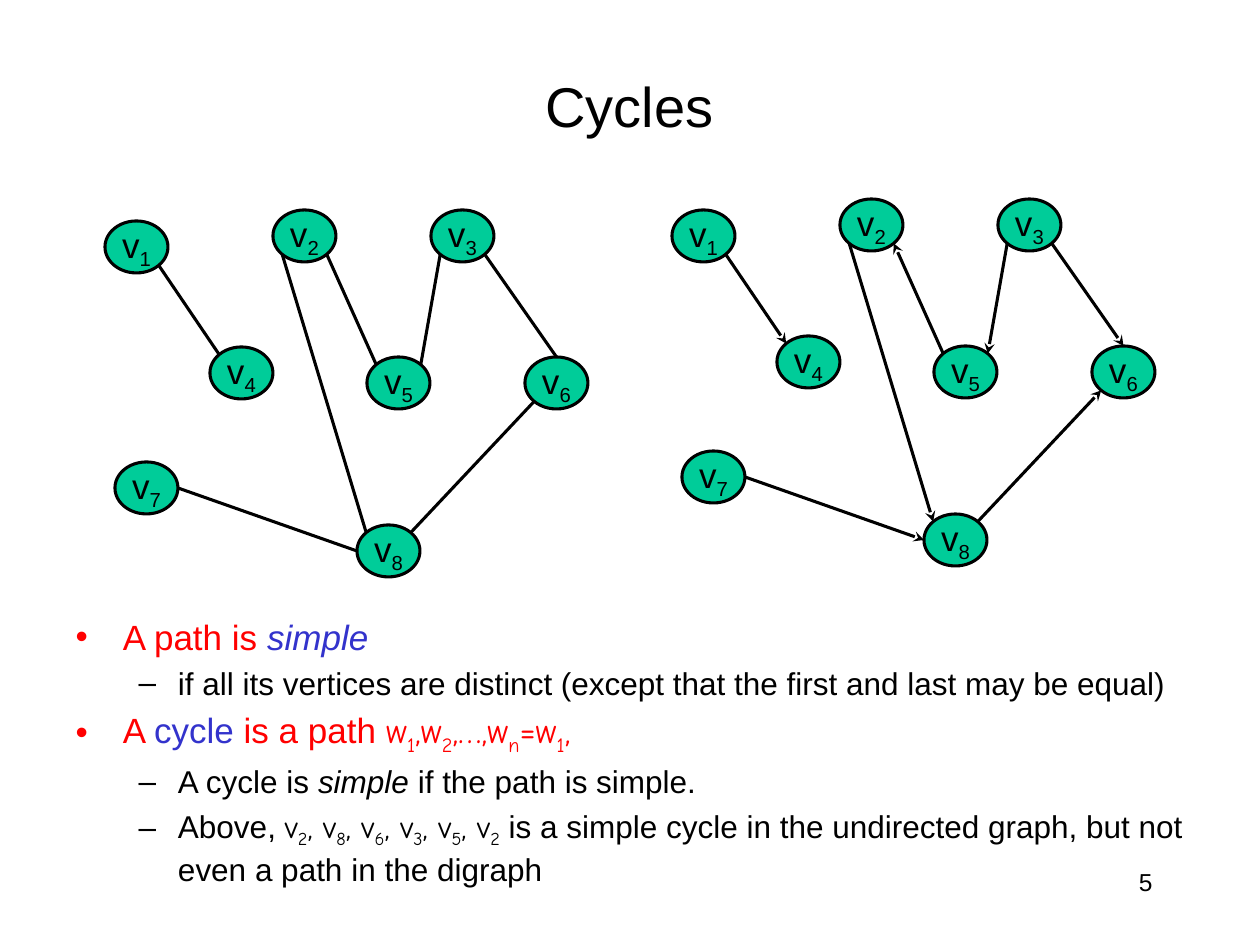
import math
import pptx
import pptx.dml.color
import pptx.enum.shapes
import pptx.enum.text
import pptx.oxml.ns
import pptx.util
from lxml import etree
from dataclasses import dataclass


@dataclass(frozen=True)
class Theme:
    font: str = "Arial"
    math_font: str = "Comic Neue"
    black: str = "000000"
    red: str = "FF0000"
    blue: str = "3333CC"
    green: str = "00CC99"
    title_size: int = 32
    large: int = 20
    medium: int = 18
    small: int = 14
    line: float = 1.75


THEME = Theme()
SCALE = 914400 / 126
TITLE = "Cycles"
PAGE_NUMBER = "5"
TITLE_BOX = (94, 53, 1071, 105)
BODY_BOX = (63, 609, 1134, 301)
NUMBER_BOX = (903, 861, 262, 63)

RED = {"color": THEME.red}
BLUE = {"color": THEME.blue}
ITALIC = {"italic": True}
MATH = {"font": THEME.math_font}
BULLETS = [
    (0, [("A path is ", RED), ("simple", BLUE | ITALIC)]),
    (1, [("if all its vertices are distinct (except that the first and last may be equal)", {})]),
    (0, [("A ", RED), ("cycle", BLUE), (" is a path ", RED),
         ("w_1,w_2,…,w_n=w_1,", RED | MATH)]),
    (1, [("A cycle is ", {}), ("simple", ITALIC), (" if the path is simple.", {})]),
    (1, [("Above, ", {}), ("v_2, v_8, v_6, v_3, v_5, v_2", MATH),
         (" is a simple cycle in the undirected graph, but not even a path in the digraph", {})]),
]

NODE_SIZE = (63, 52)
NODES = {
    1: (105, 221), 2: (273, 210), 3: (431, 210), 4: (210, 347),
    5: (367, 357), 6: (525, 357), 7: (115, 462), 8: (357, 525),
}
EDGES = [
    (1, "SE", 4, "NW"), (5, "NW", 2, "SE"), (3, "SW", 5, "NE"), (8, "NE", 6, "SW"),
    (2, "SW", 8, "NW"), (3, "SE", 6, "N"), (7, "E", 8, "W"),
]
GRAPHS = [((0, 0), False), ((567, -11), True)]
ANGLES = {"E": 0, "SE": 45, "SW": 135, "W": 180, "NW": 225, "N": 270, "NE": 315}


def emu(*lengths):
    return [round(length * SCALE) for length in lengths]


def rgb(color):
    return pptx.dml.color.RGBColor.from_string(color)


def add_text(para, text, size, color=THEME.black, font=THEME.font, italic=False):
    first, *rest = text.split("_")
    pieces = [(first, False)]
    for part in rest:
        pieces += [(part[0], True), (part[1:], False)]
    for piece, subscript in pieces:
        if not piece:
            continue
        span = para.add_run()
        span.text = piece
        span.font.name = font
        span.font.size = pptx.util.Pt(size)
        span.font.italic = italic
        span.font.color.rgb = rgb(color)
        if subscript:
            span.font._element.set("baseline", "-25000")


def place(shape, box):
    shape.left, shape.top, shape.width, shape.height = emu(*box)
    shape.text_frame.auto_size = pptx.enum.text.MSO_AUTO_SIZE.NONE


def add_node(shapes, number, corner):
    node = shapes.add_shape(pptx.enum.shapes.MSO_SHAPE.OVAL, *emu(*corner, *NODE_SIZE))
    node.shadow.inherit = False
    node.fill.solid()
    node.fill.fore_color.rgb = rgb(THEME.green)
    node.line.color.rgb = rgb(THEME.black)
    node.line.width = pptx.util.Pt(THEME.line)
    frame = node.text_frame
    frame.word_wrap = False
    frame.vertical_anchor = pptx.enum.text.MSO_ANCHOR.MIDDLE
    para = frame.paragraphs[0]
    para.alignment = pptx.enum.text.PP_ALIGN.CENTER
    add_text(para, f"v_{number}", THEME.large)


def rim_point(corner, side):
    angle = math.radians(ANGLES[side])
    width, height = NODE_SIZE
    return (corner[0] + width / 2 * (1 + math.cos(angle)),
            corner[1] + height / 2 * (1 + math.sin(angle)))


def add_edge(shapes, start, end, directed):
    edge = shapes.add_connector(pptx.enum.shapes.MSO_CONNECTOR.STRAIGHT, *emu(*start, *end))
    edge.line.color.rgb = rgb(THEME.black)
    edge.line.width = pptx.util.Pt(THEME.line)
    if directed:
        line = edge.line._get_or_add_ln()
        etree.SubElement(line, pptx.oxml.ns.qn("a:tailEnd"), type="stealth")
    etree.SubElement(edge._element.spPr, pptx.oxml.ns.qn("a:effectLst"))


def add_graph(page, shift, directed):
    group = page.shapes.add_group_shape()
    corners = {number: (x + shift[0], y + shift[1]) for number, (x, y) in NODES.items()}
    for number, corner in corners.items():
        add_node(group.shapes, number, corner)
    for source, source_side, target, target_side in EDGES:
        add_edge(group.shapes, rim_point(corners[source], source_side),
                 rim_point(corners[target], target_side), directed)


def main():
    deck = pptx.Presentation()
    deck.slide_width, deck.slide_height = emu(1260, 945)
    page = deck.slides.add_slide(deck.slide_layouts[1])

    title = page.shapes.title
    place(title, TITLE_BOX)
    add_text(title.text_frame.paragraphs[0], TITLE, THEME.title_size)

    body = page.placeholders[1]
    place(body, BODY_BOX)
    for index, (level, spans) in enumerate(BULLETS):
        frame = body.text_frame
        para = frame.add_paragraph() if index else frame.paragraphs[0]
        para.level = level
        for text, style in spans:
            add_text(para, text, THEME.medium if level else THEME.large, **style)

    for shift, directed in GRAPHS:
        add_graph(page, shift, directed)

    number = page.shapes.add_textbox(*emu(*NUMBER_BOX))
    number.text_frame.word_wrap = True
    para = number.text_frame.paragraphs[0]
    para.alignment = pptx.enum.text.PP_ALIGN.RIGHT
    add_text(para, PAGE_NUMBER, THEME.small)

    deck.save("out.pptx")


if __name__ == "__main__":
    main()
